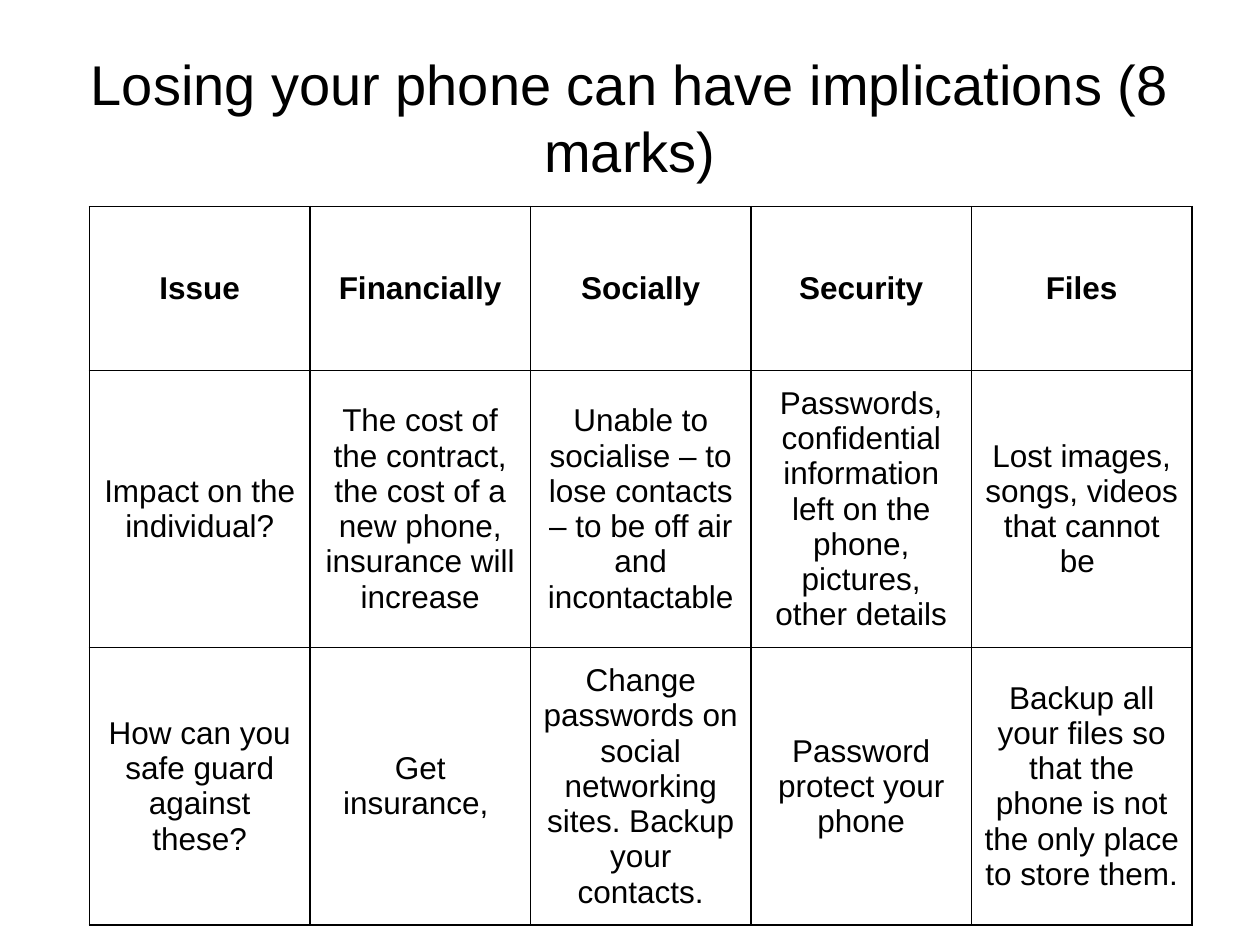
from lxml import etree
from pptx import Presentation
from pptx.dml.color import RGBColor
from pptx.enum.text import MSO_ANCHOR, PP_ALIGN
from pptx.oxml.ns import qn
from pptx.util import Inches, Pt

BLACK = RGBColor(0x00, 0x00, 0x00)
CENTER = PP_ALIGN.CENTER
MIDDLE = MSO_ANCHOR.MIDDLE
FONT = "Arial"

TITLE = "Losing your phone can have implications (8 marks)"
ROWS = [
    ["Issue", "Financially", "Socially", "Security", "Files"],
    [
        "Impact on the individual?",
        "The cost of the contract, the cost of a new phone, insurance will increase",
        "Unable to socialise – to lose contacts – to be off air and incontactable",
        "Passwords, confidential information left on the phone, pictures, other details",
        "Lost images, songs, videos that cannot be ",
    ],
    [
        "How can you safe guard against these?",
        "Get insurance, ",
        "Change passwords on social networking sites. Backup your contacts.",
        "Password protect your phone",
        "Backup all your files so that the phone is not the only place to store them.",
    ],
]
ROW_HEIGHTS = [1.3, 2.03, 2.03]
COL_WIDTH = 1.75


def set_text(tf, text, size, bold=False):
    tf.word_wrap = True
    p = tf.paragraphs[0]
    p.text = text
    p.alignment = CENTER
    p.font.name = FONT
    p.font.size = Pt(size)
    p.font.bold = bold
    p.font.color.rgb = BLACK


def set_borders(cell, color, width):
    """Outline a cell; borders must come before its fill in the XML."""
    tc_pr = cell._tc.get_or_add_tcPr()
    for i, side in enumerate(("a:lnL", "a:lnR", "a:lnT", "a:lnB")):
        ln = etree.Element(qn(side), w=str(Pt(width)))
        fill = etree.SubElement(ln, qn("a:solidFill"))
        etree.SubElement(fill, qn("a:srgbClr"), val=str(color))
        tc_pr.insert(i, ln)


def add_title(slide):
    box = slide.shapes.add_textbox(Inches(0.5), Inches(0.3), Inches(9), Inches(1.25))
    box.text_frame.vertical_anchor = MIDDLE
    set_text(box.text_frame, TITLE, 32)


def add_issue_table(slide):
    n_cols = len(ROWS[0])
    table = slide.shapes.add_table(
        len(ROWS), n_cols, Inches(0.71), Inches(1.64),
        Inches(COL_WIDTH * n_cols), Inches(sum(ROW_HEIGHTS)),
    ).table
    table.horz_banding = False
    for col in table.columns:
        col.width = Inches(COL_WIDTH)
    for r, (texts, height) in enumerate(zip(ROWS, ROW_HEIGHTS)):
        table.rows[r].height = Inches(height)
        for c, text in enumerate(texts):
            cell = table.cell(r, c)
            cell.fill.background()
            cell.vertical_anchor = MIDDLE
            set_text(cell.text_frame, text, 18, bold=r == 0)
            set_borders(cell, BLACK, 1)


def main():
    prs = Presentation()
    prs.slide_width = Inches(10)
    prs.slide_height = Inches(7.5)
    slide = prs.slides.add_slide(prs.slide_layouts[6])
    add_title(slide)
    add_issue_table(slide)
    prs.save("out.pptx")


if __name__ == "__main__":
    main()
